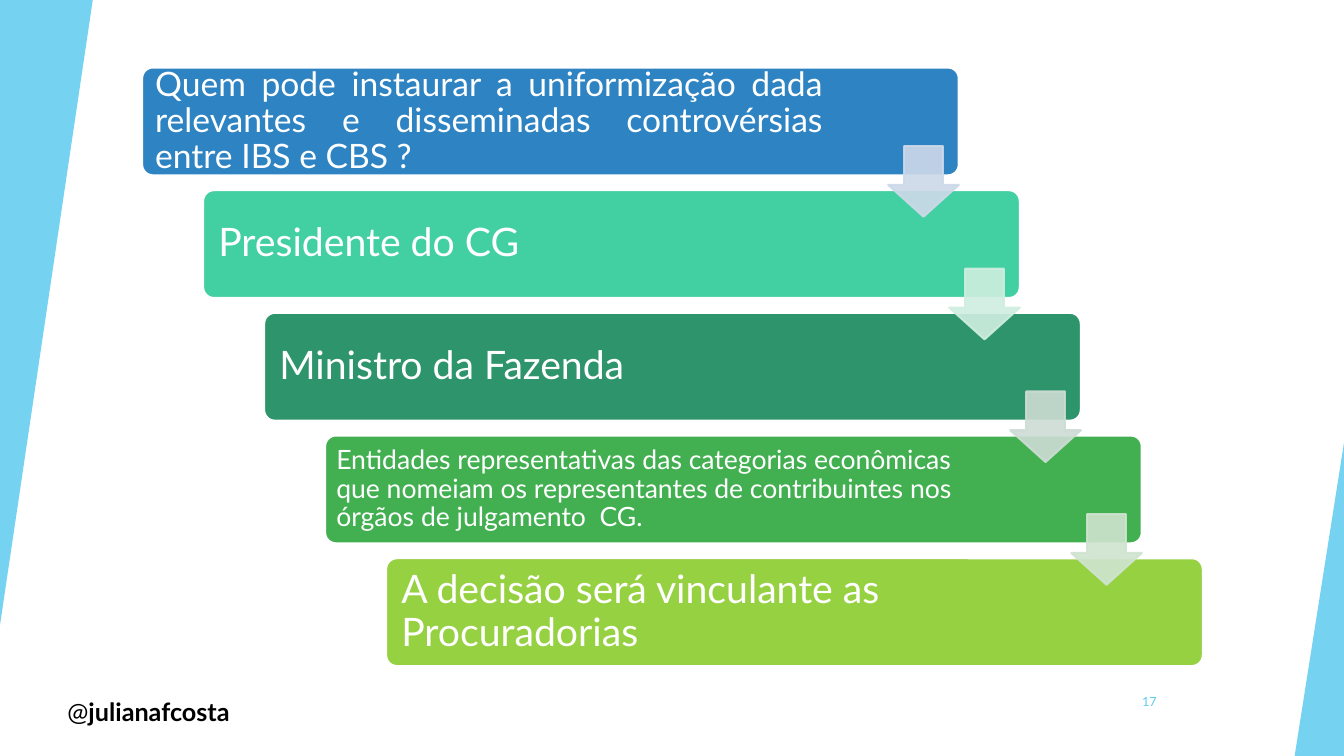
from lxml.etree import SubElement
from pptx import Presentation
from pptx.dml.color import RGBColor
from pptx.enum.shapes import MSO_SHAPE
from pptx.enum.text import MSO_ANCHOR, PP_ALIGN
from pptx.oxml.ns import qn
from pptx.util import Inches, Pt

prs = Presentation()
prs.slide_width, prs.slide_height = Inches(13.33), Inches(7.5)
s = prs.slides.add_slide(prs.slide_layouts[6])


def paint(fill, color, alpha=100):
    fill.solid()
    fill.fore_color.rgb = RGBColor.from_string(color)
    if alpha < 100:
        clr = fill._xPr.find(qn("a:solidFill"))[0]
        SubElement(clr, qn("a:alpha"), val=str(alpha * 1000))


def add_run(p, text, size, color, bold=False):
    r = p.add_run()
    r.text = text
    r.font.name, r.font.size, r.font.bold = "Lato", Pt(size), bold
    paint(r.font.fill, color)


# Side wedges: left, top, width, height, rotation
for x, y, w, h, rotation in [(0, 0, 0.92, 6.2, 180), (12.84, 4.39, 0.49, 3.11, 0)]:
    sp = s.shapes.add_shape(MSO_SHAPE.ISOSCELES_TRIANGLE,
                            Inches(x), Inches(y), Inches(w), Inches(h))
    sp.adjustments[0] = 1
    sp.rotation = rotation
    sp.shadow.inherit = False
    paint(sp.fill, "5FCBEF", 85)
    sp.line.fill.background()

# Staircase: text, size, side inset, right margin, alignment, colour
LEFT, TOP, STEP_X, STEP_Y = 1.41, 0.67, 0.605, 1.217
BAR_W, BAR_H, ARROW = 8.1, 1.07, 0.7
steps = [
    ("Quem pode instaurar a uniformização dada relevantes e disseminadas "
     "controvérsias entre IBS e CBS ?", 24, 0.1, 1.22, PP_ALIGN.JUSTIFY, "2E83C3"),
    ("Presidente do CG", 28, 0.12, 1.3, PP_ALIGN.LEFT, "42D0A2"),
    ("Ministro da Fazenda", 28, 0.12, 1.3, PP_ALIGN.LEFT, "2E946B"),
    ("Entidades representativas das categorias econômicas que nomeiam os "
     "representantes de contribuintes nos órgãos de julgamento  CG.",
     19, 0.08, 1.3, PP_ALIGN.LEFT, "42B051"),
    ("A decisão será vinculante as Procuradorias", 28, 0.12, 1.3, PP_ALIGN.LEFT, "96D141"),
]
for i, (text, size, inset, margin, align, color) in enumerate(steps):
    sp = s.shapes.add_shape(MSO_SHAPE.ROUNDED_RECTANGLE,
                            Inches(LEFT + i * STEP_X), Inches(TOP + i * STEP_Y),
                            Inches(BAR_W), Inches(BAR_H))
    sp.adjustments[0] = 0.1
    sp.shadow.inherit = False
    paint(sp.fill, color)
    paint(sp.line.fill, "FFFFFF")
    sp.line.width = Pt(1.5)
    tf = sp.text_frame
    tf.word_wrap = True
    tf.vertical_anchor = MSO_ANCHOR.MIDDLE
    tf.margin_left, tf.margin_right = Inches(inset), Inches(margin + inset)
    tf.margin_top = tf.margin_bottom = 0
    p = tf.paragraphs[0]
    p.alignment, p.line_spacing = align, 0.9
    add_run(p, text, size, "FFFFFF")

# Arrows between steps, flush with the right edge of the upper bar
for i, color in enumerate(["CDD9E9", "CFEEE0", "CDDCD4", "CFE4D0"]):
    sp = s.shapes.add_shape(MSO_SHAPE.DOWN_ARROW,
                            Inches(LEFT + BAR_W - ARROW + i * STEP_X),
                            Inches(TOP + 0.78 + i * STEP_Y), Inches(ARROW), Inches(ARROW))
    sp.adjustments[0], sp.adjustments[1] = 0.55, 0.45
    sp.shadow.inherit = False
    paint(sp.fill, color, 90)
    paint(sp.line.fill, color, 90)
    sp.line.width = Pt(1.5)

# Footer: handle and slide number
footers = [
    (0.57, 6.86, 6.68, PP_ALIGN.LEFT, MSO_ANCHOR.TOP,
     [("@", 18, "000000", False), ("julianafcosta", 18, "000000", True)]),
    (10.82, 6.76, 0.75, PP_ALIGN.RIGHT, MSO_ANCHOR.MIDDLE, [("17", 9, "5FCBEF", False)]),
]
for x, y, w, align, anchor, runs in footers:
    tf = s.shapes.add_textbox(Inches(x), Inches(y), Inches(w), Inches(0.4)).text_frame
    tf.word_wrap = True
    tf.vertical_anchor = anchor
    p = tf.paragraphs[0]
    p.alignment = align
    for run in runs:
        add_run(p, *run)

prs.save("out.pptx")
